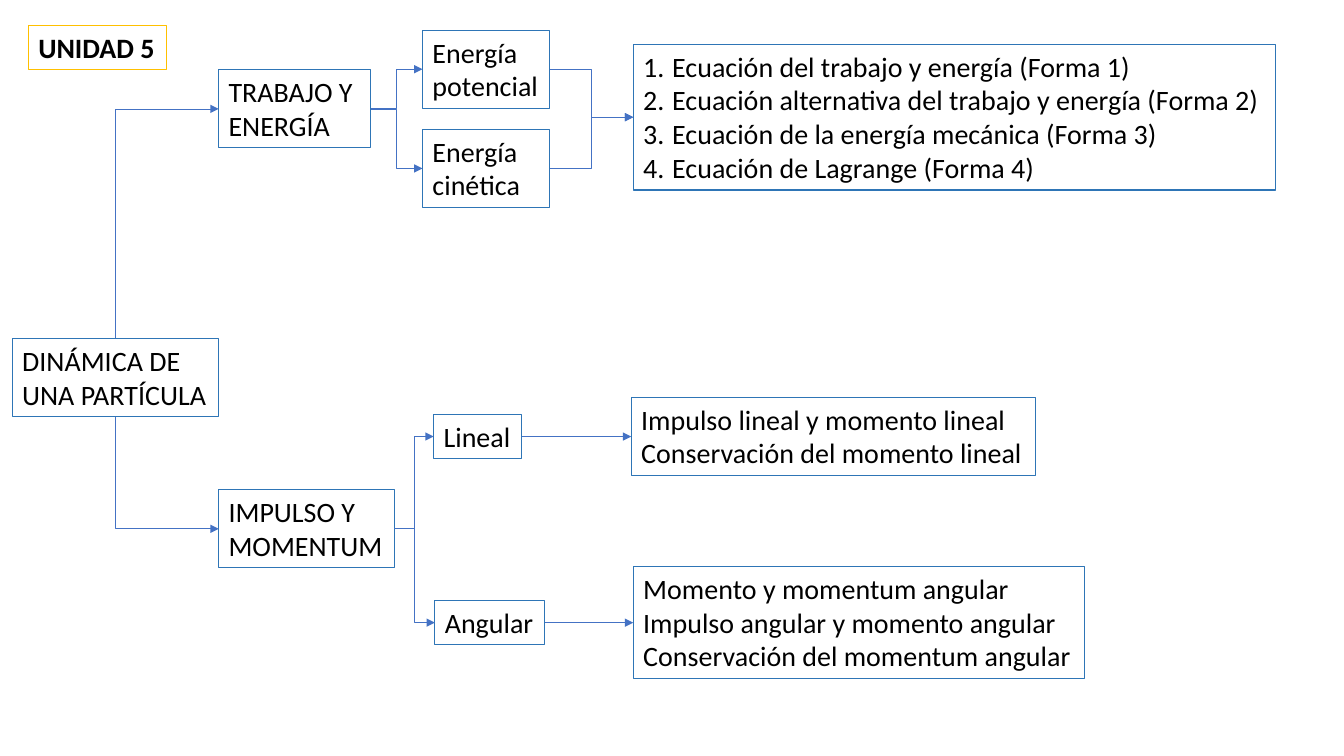
from dataclasses import dataclass

from lxml import etree
from pptx import Presentation
from pptx import util as u
from pptx.dml.color import RGBColor
from pptx.enum import shapes, text
from pptx.oxml.ns import qn


@dataclass(frozen=True)
class Theme:
    """Colours, type and line sizes of the slide."""
    ink: RGBColor = RGBColor(0x00, 0x00, 0x00)
    border: RGBColor = RGBColor(0x2E, 0x75, 0xB6)
    unit_border: RGBColor = RGBColor(0xFF, 0xC0, 0x00)
    arrow: RGBColor = RGBColor(0x44, 0x72, 0xC4)
    font: str = "Calibri"
    size: u.Pt = u.Pt(20)
    border_width: u.Pt = u.Pt(0.75)
    arrow_width: u.Pt = u.Pt(0.5)


THEME = Theme()
TOP, LEFT, BOTTOM, RIGHT = range(4)


def box_height(lines):
    """Return the height in centimetres of a box with this many lines."""
    return 0.27 + 0.85 * lines


def number_paragraph(paragraph):
    """Give a paragraph an automatic number and a hanging indent."""
    properties = paragraph._p.get_or_add_pPr()
    indent = u.Cm(0.73)
    properties.set("marL", str(indent))
    properties.set("indent", str(-indent))
    etree.SubElement(properties, qn("a:buFont"), typeface="+mj-lt")
    etree.SubElement(properties, qn("a:buAutoNum"), type="arabicPeriod")


def format_box(shape, lines, border, bold=False, numbered=False):
    """Fill a shape with lines of text and outline it."""
    shape.line.color.rgb = border
    shape.line.width = THEME.border_width
    frame = shape.text_frame
    frame.text = "\n".join(lines)
    frame.word_wrap = False
    frame.auto_size = text.MSO_AUTO_SIZE.SHAPE_TO_FIT_TEXT
    frame.vertical_anchor = text.MSO_ANCHOR.TOP
    for paragraph in frame.paragraphs:
        if numbered:
            number_paragraph(paragraph)
        paragraph.alignment = text.PP_ALIGN.LEFT
        for run in paragraph.runs:
            run.font.name = THEME.font
            run.font.size = THEME.size
            run.font.bold = bold
            run.font.color.rgb = THEME.ink


def add_box(slide, left, top, width, lines, numbered=False):
    """Add an outlined concept box, placed in centimetres."""
    height = box_height(len(lines))
    shape = slide.shapes.add_textbox(u.Cm(left), u.Cm(top), u.Cm(width), u.Cm(height))
    format_box(shape, lines, THEME.border, numbered=numbered)
    return shape


def add_arrow(slide, source, target, source_side=RIGHT):
    """Join a side of the source to the left of the target with an elbow arrow."""
    connector = slide.shapes.add_connector(shapes.MSO_CONNECTOR.ELBOW, 0, 0, 0, 0)
    connector.begin_connect(source, source_side)
    connector.end_connect(target, LEFT)
    connector.line.color.rgb = THEME.arrow
    connector.line.width = THEME.arrow_width
    etree.SubElement(connector.line._get_or_add_ln(), qn("a:tailEnd"), type="triangle")
    etree.SubElement(connector._element.spPr, qn("a:effectLst"))
    return connector


def add_corner_arrow(slide, source, target, source_side):
    """Leave the source vertically and turn once into the left of the target."""
    connector = add_arrow(slide, source, target, source_side)
    across, along = connector.width, connector.height
    centre_x = connector.left + across // 2
    centre_y = connector.top + along // 2
    connector.left, connector.top = centre_x - along // 2, centre_y - across // 2
    connector.width, connector.height = along, across
    upward = source_side == TOP
    properties = connector._element.spPr
    properties.find(qn("a:prstGeom")).set("prst", "bentConnector2")
    transform = properties.find(qn("a:xfrm"))
    transform.set("rot", str((90 if upward else 270) * 60000))
    transform.set("flipH", "1")
    transform.set("flipV", "1" if upward else "0")


def add_unit_title(slide, left, top, width):
    """Place the unit name in the title placeholder at a fixed size."""
    title = slide.shapes.title
    title.left, title.top = u.Cm(left), u.Cm(top)
    title.width, title.height = u.Cm(width), u.Cm(box_height(1))
    format_box(title, ["UNIDAD 5"], THEME.unit_border, bold=True)
    title.text_frame.auto_size = text.MSO_AUTO_SIZE.NONE


def add_energy_branch(slide, left, top):
    """Draw the work and energy branch and return its first box."""
    work = add_box(slide, left, top + 1, 3.84, ["TRABAJO Y", "ENERGÍA"])
    equations = add_box(slide, left + 10.45, top + 0.36, 16.18, [
        "Ecuación del trabajo y energía (Forma 1)",
        "Ecuación alternativa del trabajo y energía (Forma 2)",
        "Ecuación de la energía mecánica (Forma 3)",
        "Ecuación de Lagrange (Forma 4)",
    ], numbered=True)
    for index, kind in enumerate(["potencial", "cinética"]):
        energy = add_box(slide, left + 5.14, top + 2.5 * index, 3.21, ["Energía", kind])
        add_arrow(slide, work, energy)
        add_arrow(slide, energy, equations)
    return work


def add_momentum_branch(slide, left, top):
    """Draw the impulse and momentum branch and return its first box."""
    impulse = add_box(slide, left, top + 2.34, 4.43, ["IMPULSO Y", "MOMENTUM"])
    rows = [
        ("Lineal", 5.42, 2.22, 10.4, 10.18, 1, [
            "Impulso lineal y momento lineal",
            "Conservación del momento lineal",
        ]),
        ("Angular", 5.45, 2.77, 10.45, 11.38, 5.69, [
            "Momento y momentum angular",
            "Impulso angular y momento angular",
            "Conservación del momentum angular",
        ]),
    ]
    for name, name_left, name_width, topics_left, topics_width, middle, topics in rows:
        kind = add_box(slide, left + name_left, top + middle - box_height(1) / 2,
                       name_width, [name])
        detail = add_box(slide, left + topics_left,
                         top + middle - box_height(len(topics)) / 2, topics_width, topics)
        add_arrow(slide, impulse, kind)
        add_arrow(slide, kind, detail)
    return impulse


def add_concept_map(slide, left, top):
    """Draw the root concept and its two branches."""
    root = add_box(slide, left, top + 7.77, 5.19, ["DINÁMICA DE", "UNA PARTÍCULA"])
    work = add_energy_branch(slide, left + 5.2, top)
    impulse = add_momentum_branch(slide, left + 5.2, top + 9.24)
    add_corner_arrow(slide, root, work, TOP)
    add_corner_arrow(slide, root, impulse, BOTTOM)


def main():
    """Build and save the presentation."""
    presentation = Presentation()
    presentation.slide_width, presentation.slide_height = u.Cm(33.87), u.Cm(19.05)
    slide = presentation.slides.add_slide(presentation.slide_layouts[5])
    add_unit_title(slide, 0.71, 0.64, 3.48)
    add_concept_map(slide, 0.31, 0.76)
    presentation.save("out.pptx")


if __name__ == "__main__":
    main()
